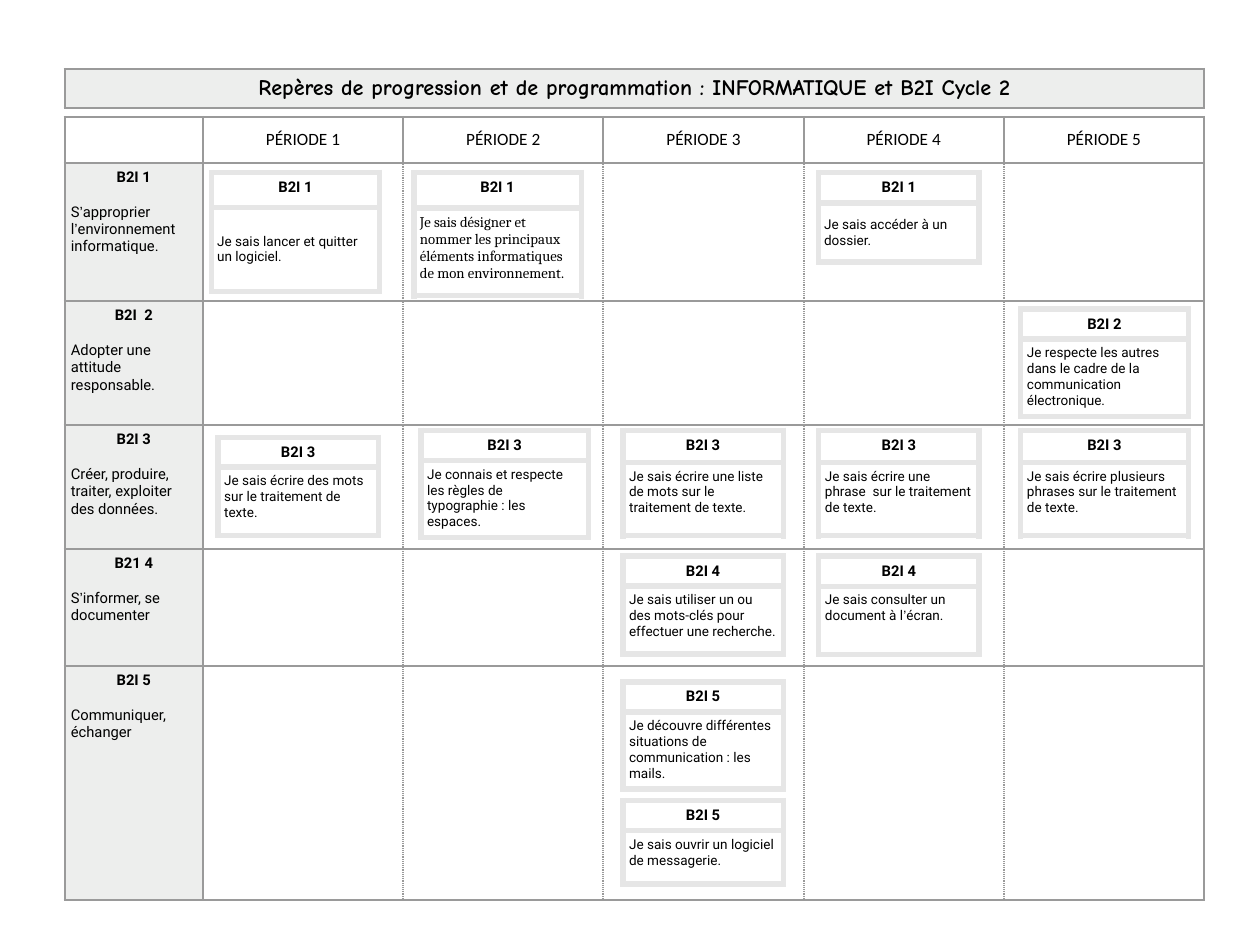
"""Build the yearly computing skills plan as a grid of five periods with skill cards."""
from lxml import etree
from pptx import Presentation
from pptx.dml.color import RGBColor
from pptx.enum.text import MSO_ANCHOR, PP_ALIGN
from pptx.oxml.ns import qn
from pptx.util import Inches, Pt

CENTER, LEFT = PP_ALIGN.CENTER, PP_ALIGN.LEFT
TOP, MIDDLE = MSO_ANCHOR.TOP, MSO_ANCHOR.MIDDLE
BLACK = RGBColor(0x00, 0x00, 0x00)
WHITE = RGBColor(0xFF, 0xFF, 0xFF)
TINT = RGBColor(0x0E, 0x12, 0x03)
GREY = RGBColor(0x9A, 0x9A, 0x9A)
PALE = RGBColor(0xE6, 0xE6, 0xE6)
ALPHA = "7000"

TITLE = "Repères de progression et de programmation : INFORMATIQUE et B2I Cycle 2"
PERIODS = [f"PÉRIODE {n}" for n in range(1, 6)]
SKILLS = [
    ("B2I 1", "S’approprier  l’environnement informatique."),
    ("B2I  2", "Adopter une attitude responsable."),
    ("B2I 3", "Créer, produire, traiter, exploiter des données."),
    ("B21 4", "S’informer, se documenter"),
    ("B2I 5", "Communiquer, échanger"),
]
GRID_LEFT, GRID_TOP = 0.73, 1.32
COLS = [1.56] + [2.26] * 5
ROWS = [0.52, 1.56, 1.4, 1.4, 1.32, 2.64]
WIDE, SLIM = 1.89, 1.81
BODY = ("Roboto", 11, TOP)
MID = ("Roboto", 11, MIDDLE)
SERIF = ("Cambria", 12, TOP)

CARDS = [
    (2.39, 1.95, WIDE, 0.39, 0.95, "B2I 1", "Je sais lancer et quitter un logiciel.", MID),
    (9.24, 1.95, SLIM, 0.34, 0.67, "B2I 1", "Je sais accéder à un dossier.", MID),
    (4.67, 1.95, WIDE, 0.4, 0.99, "B2I 1",
     "Je sais désigner et nommer les principaux éléments informatiques de mon environnement.", SERIF),
    (11.52, 3.49, WIDE, 0.34, 0.87, "B2I 2",
     "Je respecte les autres dans le cadre de la communication électronique.", BODY),
    (2.46, 4.94, SLIM, 0.33, 0.77, "B2I 3",
     "Je sais écrire des mots sur le traitement de texte.", BODY),
    (4.75, 4.86, WIDE, 0.34, 0.87, "B2I 3",
     "Je connais et respecte les règles de typographie : les espaces.", BODY),
    (7.03, 4.86, SLIM, 0.36, 0.83, "B2I 3",
     "Je sais écrire une liste de mots sur le traitement de texte.", BODY),
    (9.24, 4.86, SLIM, 0.36, 0.83, "B2I 3",
     "Je sais écrire une phrase  sur le traitement de texte.", BODY),
    (11.52, 4.86, WIDE, 0.36, 0.83, "B2I 3",
     "Je sais écrire plusieurs phrases sur le traitement de texte.", BODY),
    (7.03, 6.28, SLIM, 0.33, 0.77, "B2I 4",
     "Je sais utiliser un ou des mots-clés pour effectuer une recherche.", BODY),
    (9.24, 6.28, SLIM, 0.34, 0.77, "B2I 4", "Je sais consulter un document à l’écran.", BODY),
    (7.03, 7.7, SLIM, 0.34, 0.87, "B2I 5",
     "Je découvre différentes situations de communication : les mails.", BODY),
    (7.03, 9.04, SLIM, 0.34, 0.6, "B2I 5", "Je sais ouvrir un logiciel de messagerie.", BODY),
]


def add_grid(slide, left, top, cols, rows):
    """Add a plain table with the given column widths and row heights."""
    frame = slide.shapes.add_table(len(rows), len(cols), Inches(left), Inches(top),
                                   Inches(sum(cols)), Inches(sum(rows)))
    table = frame.table
    table.first_row = table.horz_banding = False
    for col, width in zip(table.columns, cols):
        col.width = Inches(width)
    for row, height in zip(table.rows, rows):
        row.height = Inches(height)
    return table


def set_edges(cell, color, width, dots=""):
    """Draw the four cell edges, dotted on the sides named in dots."""
    props = cell._tc.get_or_add_tcPr()
    for spot, side in enumerate("LRTB"):
        line = etree.Element(qn(f"a:ln{side}"), w=str(Pt(width)))
        fill = etree.SubElement(line, qn("a:solidFill"))
        etree.SubElement(fill, qn("a:srgbClr"), val=str(color))
        dash = "sysDot" if side in dots else "solid"
        etree.SubElement(line, qn("a:prstDash"), val=dash)
        props.insert(spot, line)


def set_fill(cell, color):
    """Fill a cell, making the tint see-through."""
    cell.fill.solid()
    cell.fill.fore_color.rgb = color
    if color == TINT:
        shade = cell._tc.tcPr.find(f"{qn('a:solidFill')}/{qn('a:srgbClr')}")
        etree.SubElement(shade, qn("a:alpha"), val=ALPHA)


def set_pad(cell, pad, anchor=TOP):
    """Set equal cell margins and the vertical anchor."""
    cell.margin_left = cell.margin_right = Inches(pad)
    cell.margin_top = cell.margin_bottom = Inches(pad)
    cell.vertical_anchor = anchor


def write(para, text, font, size, bold=False, align=LEFT):
    """Write text run by run, with each apostrophe in Arial."""
    para.alignment = align
    for part in text.replace("’", "|’|").split("|"):
        run = para.add_run()
        run.text = part
        run.font.name = "Arial" if part == "’" else font
        run.font.size = Pt(size)
        run.font.bold = bold
        run.font.color.rgb = BLACK


def add_plan(slide):
    """Add the grid of periods and skills."""
    table = add_grid(slide, GRID_LEFT, GRID_TOP, COLS, ROWS)
    last = len(COLS) - 1
    for r in range(len(ROWS)):
        for c in range(len(COLS)):
            cell = table.cell(r, c)
            dots = ("L" if c > 1 else "") + ("R" if 0 < c < last else "")
            cell.fill.background()
            set_edges(cell, GREY, 2, dots if r else "")
    for c, name in enumerate(PERIODS, 1):
        cell = table.cell(0, c)
        set_pad(cell, 0.06, MIDDLE)
        write(cell.text_frame.paragraphs[0], name, "Calibri", 14, align=CENTER)
    for r, (code, goal) in enumerate(SKILLS, 1):
        cell = table.cell(r, 0)
        set_fill(cell, TINT)
        set_pad(cell, 0.07)
        write(cell.text_frame.paragraphs[0], code, "Roboto", 12, True, CENTER)
        para = cell.text_frame.add_paragraph()
        para.space_before = Pt(14)
        write(para, goal, "Roboto", 12)


def add_title(slide):
    """Add the banner above the grid."""
    cell = add_grid(slide, GRID_LEFT, 0.78, [sum(COLS)], [0.44]).cell(0, 0)
    set_fill(cell, TINT)
    set_edges(cell, GREY, 2)
    set_pad(cell, 0.07)
    write(cell.text_frame.paragraphs[0], TITLE, "Comic Neue", 18, True, CENTER)


def add_card(slide, left, top, width, head, body, code, goal, style):
    """Add one skill card: a code above a goal."""
    table = add_grid(slide, left, top, [width], [head, body])
    font, size, anchor = style
    for cell in table.iter_cells():
        set_fill(cell, WHITE)
        set_edges(cell, PALE, 5)
    code_cell, goal_cell = table.iter_cells()
    set_pad(code_cell, 0.07)
    set_pad(goal_cell, 0.06 if anchor == MIDDLE else 0.07, anchor)
    write(code_cell.text_frame.paragraphs[0], code, "Roboto", 12, True, CENTER)
    write(goal_cell.text_frame.paragraphs[0], goal, font, size)


def main():
    """Build and save the slide."""
    deck = Presentation()
    deck.slide_width, deck.slide_height = Inches(14.22), Inches(10.67)
    slide = deck.slides.add_slide(deck.slide_layouts[6])
    add_plan(slide)
    add_title(slide)
    for card in CARDS:
        add_card(slide, *card)
    deck.save("out.pptx")


if __name__ == "__main__":
    main()
